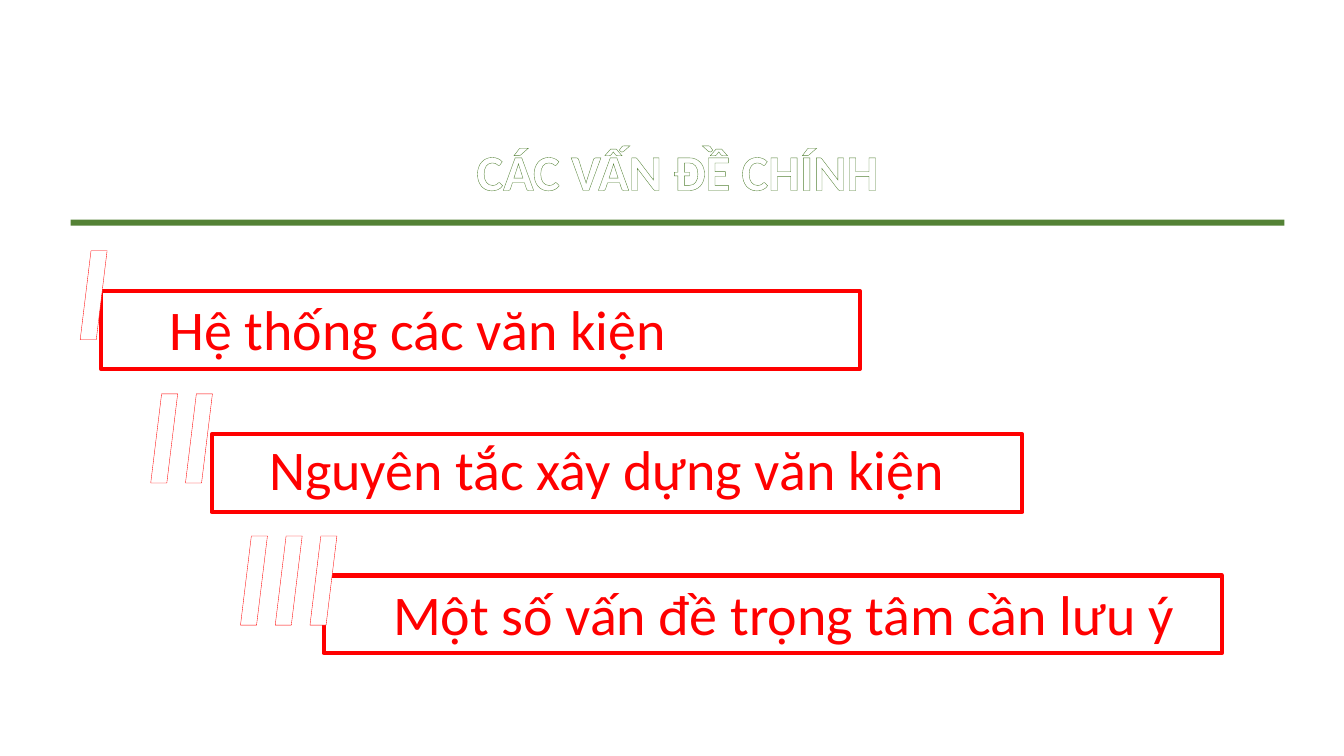
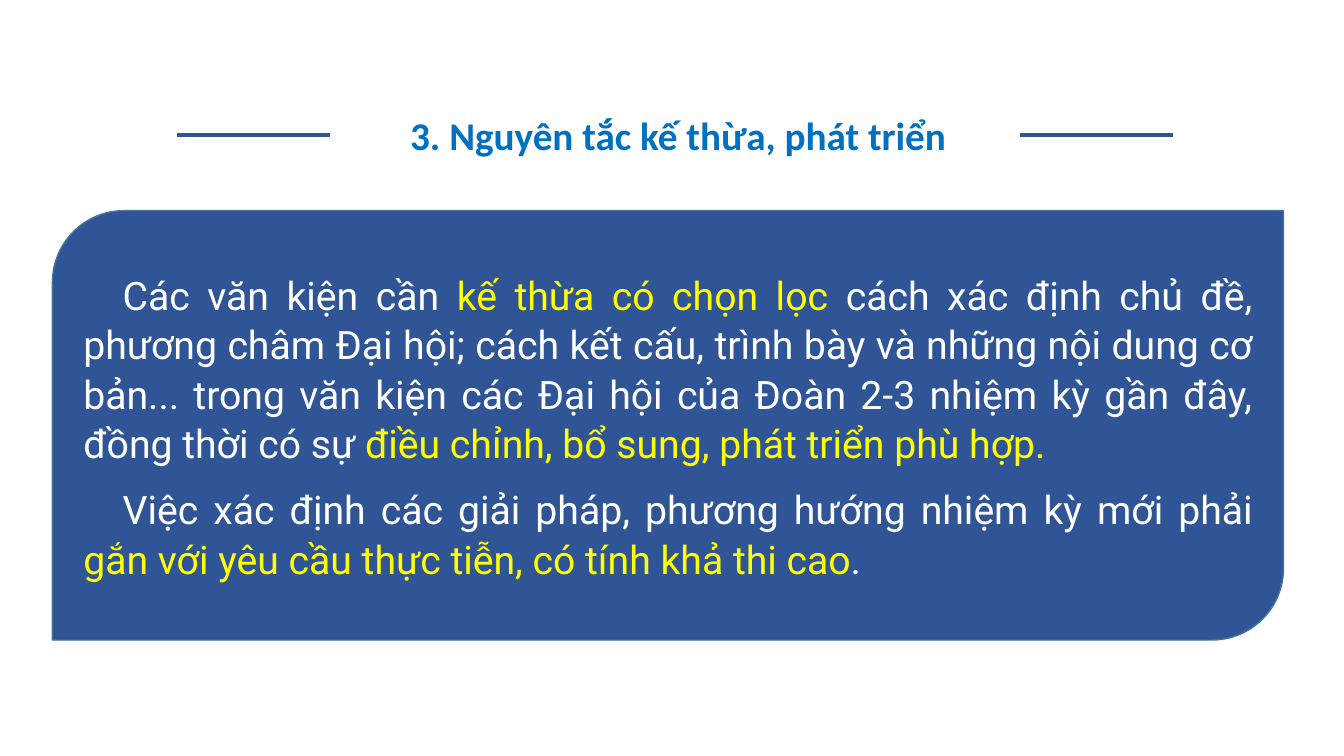
import pptx
import pptx.dml.color
import pptx.enum.shapes
import pptx.enum.text
import pptx.oxml
import pptx.oxml.ns
import pptx.util

Inches = pptx.util.Inches
Pt = pptx.util.Pt
MSO_SHAPE = pptx.enum.shapes.MSO_SHAPE
PP_ALIGN = pptx.enum.text.PP_ALIGN
MSO_ANCHOR = pptx.enum.text.MSO_ANCHOR

WHITE, RED, YELLOW = "FFFFFF", "FF0000", "FFFF00"
GREEN, NAVY, SKY, EDGE = "548235", "2F5597", "0070C0", "43739E"
HEADING, NUMERAL, BODY = "Calibri", "Lato", "Roboto"


def rgb(color):
    return pptx.dml.color.RGBColor.from_string(color)


class Deck:
    """Holds the presentation, its style and the slide being built."""

    def __init__(self):
        self.prs = pptx.Presentation()
        self.prs.slide_width = Inches(13.33)
        self.prs.slide_height = Inches(7.5)
        self.s = None

    def new_slide(self):
        layout = self.prs.slide_layouts.get_by_name("Title Only")
        self.s = self.prs.slides.add_slide(layout)

    def format_run(self, r, size, font, color, bold=False, italic=False):
        r.font.size = Pt(size)
        r.font.name = font
        r.font.bold = bold
        r.font.italic = italic
        r.font.color.rgb = rgb(color)

    def outline(self, r, color, width):
        """Draw a line around the letters of a run."""
        ln = pptx.oxml.parse_xml(
            f'<a:ln {pptx.oxml.ns.nsdecls("a")} w="{Pt(width)}"><a:solidFill>'
            f'<a:srgbClr val="{color}"/></a:solidFill></a:ln>')
        r.font._element.insert(0, ln)

    def indent(self, p, inches):
        """Indent the first line only."""
        pPr = p._p.get_or_add_pPr()
        pPr.set("marL", "0")
        pPr.set("indent", str(Inches(inches)))

    def title(self, text, box, size, color, anchor):
        sp = self.s.shapes.title
        sp.left, sp.top, sp.width, sp.height = map(Inches, box)
        tf = sp.text_frame
        tf.text = text
        tf.auto_size = pptx.enum.text.MSO_AUTO_SIZE.NONE
        tf.vertical_anchor = anchor
        p = tf.paragraphs[0]
        p.alignment = PP_ALIGN.CENTER
        self.format_run(p.runs[0], size, HEADING, color, bold=True)
        return p

    def text(self, text, box, size, font, color, **style):
        sp = self.s.shapes.add_textbox(*map(Inches, box))
        tf = sp.text_frame
        tf.word_wrap = True
        tf.text = text
        r = tf.paragraphs[0].runs[0]
        self.format_run(r, size, font, color, **style)
        return r

    def shape(self, kind, box, fill, line=None, width=1):
        sp = self.s.shapes.add_shape(kind, *map(Inches, box))
        sp.shadow.inherit = False
        sp.fill.solid()
        sp.fill.fore_color.rgb = rgb(fill)
        if line:
            sp.line.color.rgb = rgb(line)
            sp.line.width = Pt(width)
        else:
            sp.line.fill.background()
        return sp

    def rule(self, left, top, length):
        """Draw a horizontal line."""
        sp = self.s.shapes.add_connector(
            pptx.enum.shapes.MSO_CONNECTOR.STRAIGHT,
            Inches(left), Inches(top), Inches(left + length), Inches(top))
        sp.line.color.rgb = rgb(NAVY)
        sp.line.width = Pt(2.25)
        sp._element.spPr.append(pptx.oxml.parse_xml(
            f'<a:effectLst {pptx.oxml.ns.nsdecls("a")}/>'))

    def agenda_item(self, numeral, label, frame, label_at, numeral_at):
        """Draw a framed label with a large outlined numeral at its corner."""
        height = 0.77
        left, top, width = frame
        self.shape(MSO_SHAPE.RECTANGLE, (left, top, width, height), WHITE, RED, 3)
        self.text(label, (*label_at, width - 0.15, height), 40, HEADING, RED)
        r = self.text(numeral, (*numeral_at, 1.63, 1.58), 88, NUMERAL, WHITE,
                      bold=True, italic=True)
        self.outline(r, RED, 3)

    def panel(self, box, paragraphs):
        """Draw a filled panel; paragraphs are lists of (text, color) pairs."""
        sp = self.shape(MSO_SHAPE.ROUND_2_DIAG_RECTANGLE, box, NAVY, EDGE)
        tf = sp.text_frame
        tf.word_wrap = True
        tf.vertical_anchor = MSO_ANCHOR.MIDDLE
        for i, (space_after, parts) in enumerate(paragraphs):
            p = tf.add_paragraph() if i else tf.paragraphs[0]
            p.alignment = PP_ALIGN.JUSTIFY
            p.line_spacing = 1.05
            p.space_after = Pt(space_after)
            self.indent(p, 0.39)
            for text, color in parts:
                r = p.add_run()
                r.text = text
                self.format_run(r, 28, BODY, color)


def agenda_slide(deck):
    deck.new_slide()
    p = deck.title("CÁC VẤN ĐỀ CHÍNH", (0.61, 1.34, 12.22, 0.71), 36, WHITE,
                   MSO_ANCHOR.TOP)
    deck.outline(p.runs[0], GREEN, 1.5)
    deck.shape(MSO_SHAPE.RECTANGLE, (0.7, 2.18, 12.04, 0.06), GREEN)
    items = [
        ("I", "Hệ thống các văn kiện",
         (1, 2.89, 7.53), (1.58, 2.87), (0.65, 2.1)),
        ("II", "Nguyên tắc xây dựng văn kiện",
         (2.1, 4.31, 8.04), (2.57, 4.26), (1.35, 3.52)),
        ("III", "Một số vấn đề trọng tâm cần lưu ý",
         (3.21, 5.71, 8.91), (3.8, 5.7), (2.24, 4.93)),
    ]
    for item in items:
        deck.agenda_item(*item)


def principle_slide(deck):
    deck.new_slide()
    deck.panel((0.52, 2.09, 12.21, 4.26), [
        (12, [("Các văn kiện cần ", WHITE),
              ("kế thừa có chọn lọc ", YELLOW),
              ("cách xác định chủ đề, phương châm Đại hội; cách kết cấu, "
               "trình bày và những nội dung cơ bản... trong văn kiện các "
               "Đại hội của Đoàn 2-3 nhiệm kỳ gần đây, đồng thời có sự ", WHITE),
              ("điều chỉnh, bổ sung, phát triển phù hợp.", YELLOW)]),
        (6, [("Việc xác định các giải pháp, phương hướng nhiệm kỳ mới phải ",
              WHITE),
             ("gắn với yêu cầu thực tiễn, có tính khả thi cao", YELLOW),
             (".", WHITE)]),
    ])
    for left in (1.76, 10.12):
        deck.rule(left, 1.34, 1.51)
    p = deck.title("3. Nguyên tắc kế thừa, phát triển", (3.06, 1.03, 7.13, 0.62),
                   28, SKY, MSO_ANCHOR.MIDDLE)
    deck.indent(p, 0.2)


def main():
    deck = Deck()
    agenda_slide(deck)
    principle_slide(deck)
    deck.prs.save("out.pptx")


if __name__ == "__main__":
    main()
